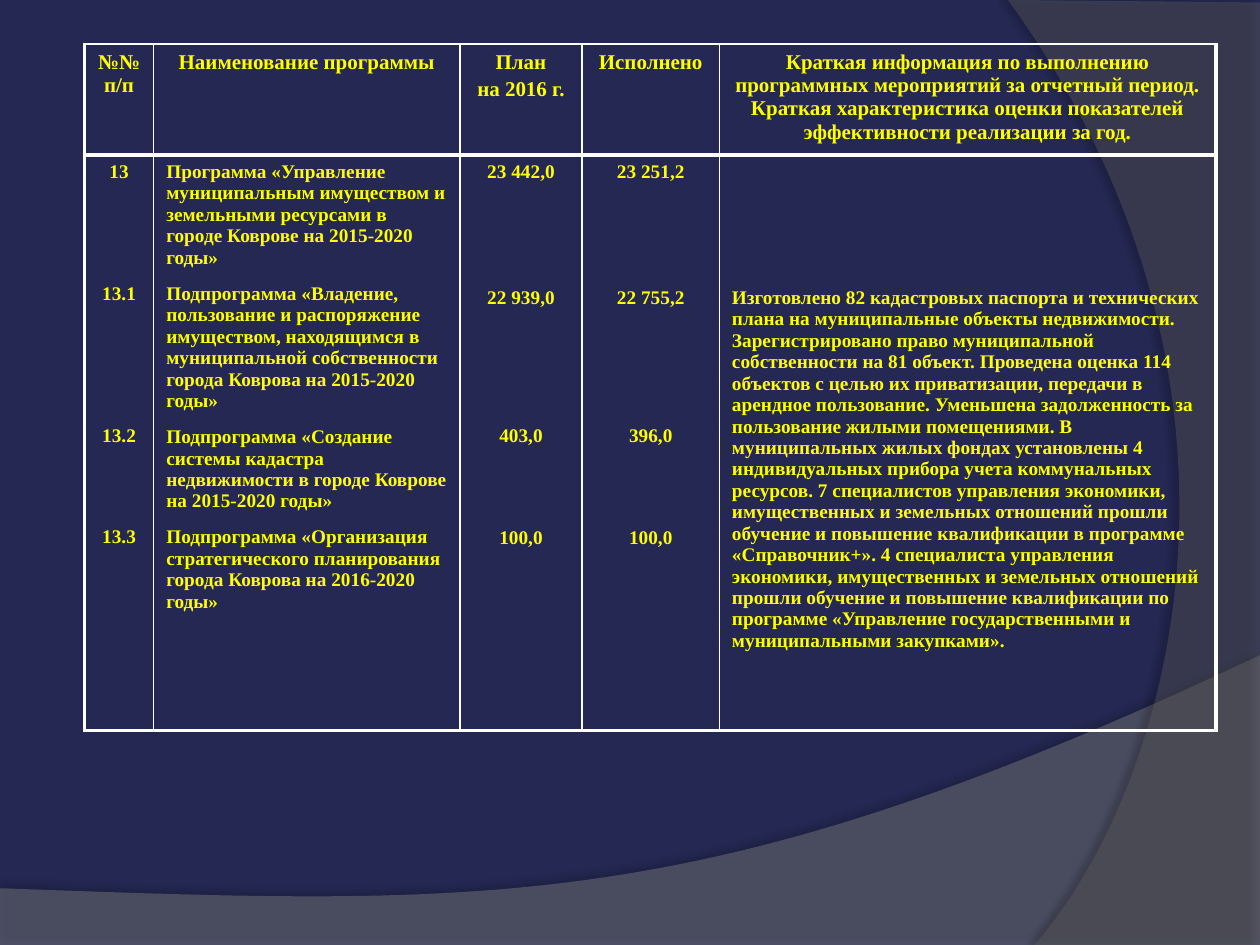
from dataclasses import dataclass

from lxml.etree import SubElement
from pptx import Presentation
from pptx.dml.color import RGBColor as Color
from pptx.enum.text import PP_ALIGN as Align
from pptx.oxml.ns import qn
from pptx.util import Inches, Pt


@dataclass(frozen=True)
class Theme:
    """Colours, font and type sizes of the deck."""
    back: str = "242852"
    wave: str = "7F7F7F"
    arc: str = "5E5E5E"
    shade: str = "000000"
    ink: str = "FFFF00"
    rule: str = "FFFFFF"
    font: str = "Times New Roman"
    head: float = 12
    body: float = 11
    thin: float = 1
    thick: float = 2.25


THEME = Theme()
COLUMNS = [0.55, 2.43, 0.97, 1.09, 3.94]
ROWS = [0.88, 4.57]
HEADINGS = [
    ["№№ п/п"],
    ["Наименование программы"],
    ["План", "на 2016 г."],
    ["Исполнено"],
    ["Краткая информация по выполнению программных мероприятий за отчетный период. "
     "Краткая характеристика оценки показателей эффективности реализации за год."],
]
NUMBERS = ["13", "13.1", "13.2", "13.3"]
PROGRAMMES = [
    "Программа «Управление муниципальным имуществом и земельными ресурсами "
    "в городе Коврове на 2015-2020 годы»",
    "Подпрограмма «Владение, пользование и распоряжение имуществом, находящимся "
    "в муниципальной собственности города Коврова на 2015-2020 годы»",
    "Подпрограмма «Создание системы кадастра недвижимости в городе Коврове "
    "на 2015-2020 годы»",
    "Подпрограмма «Организация стратегического планирования города Коврова "
    "на 2016-2020 годы»",
]
PLAN = ["23 442,0", "22 939,0", "403,0", "100,0"]
SPENT = ["23 251,2", "22 755,2", "396,0", "100,0"]
SUMMARY = [
    "Изготовлено 82 кадастровых паспорта и технических плана на муниципальные объекты "
    "недвижимости. Зарегистрировано право муниципальной собственности на 81 объект. "
    "Проведена оценка 114 объектов с целью их приватизации, передачи в арендное "
    "пользование. Уменьшена задолженность за пользование жилыми помещениями. "
    "В муниципальных жилых фондах установлены 4 индивидуальных прибора учета "
    "коммунальных ресурсов. 7 специалистов управления экономики, имущественных и "
    "земельных отношений прошли обучение и повышение квалификации в программе "
    "«Справочник+». 4 специалиста управления экономики, имущественных и земельных "
    "отношений прошли обучение и повышение квалификации по программе «Управление "
    "государственными и муниципальными закупками»."
]
NUMBER_GAPS = [57.5, 69, 45.5]
PROGRAMME_GAPS = [8.4] * 3
AMOUNT_GAPS = [59.8, 66.7, 46.1]


def curve(start, first, second, end, steps=60):
    """Return points along a cubic curve, without its start."""
    points = []
    for step in range(1, steps + 1):
        t = step / steps
        weights = ((1 - t) ** 3, 3 * t * (1 - t) ** 2, 3 * t * t * (1 - t), t ** 3)
        corners = (start, first, second, end)
        points.append(tuple(sum(w * c[axis] for w, c in zip(weights, corners))
                            for axis in (0, 1)))
    return points


def add_alpha(color, percent):
    """Make a colour element partly transparent."""
    SubElement(color, qn("a:alpha")).set("val", str(percent * 1000))


def add_swoosh(page, points, color, opacity, shade, distance, direction):
    """Draw a translucent outline with a soft shadow."""
    start, *rest = [(Inches(x), Inches(y)) for x, y in points]
    builder = page.shapes.build_freeform(*start)
    builder.add_line_segments(rest, close=True)
    shape = builder.convert_to_shape()
    shape.line.fill.background()
    shape.fill.solid()
    shape.fill.fore_color.rgb = Color.from_string(color)
    shape.shadow.inherit = False
    properties = shape._element.spPr
    add_alpha(properties.find(f"{qn('a:solidFill')}/{qn('a:srgbClr')}"), opacity)
    shadow = SubElement(properties.find(qn("a:effectLst")), qn("a:outerShdw"),
                        blurRad=str(Pt(4)), dist=str(Pt(distance)),
                        dir=str(direction * 60000), algn="ctr", rotWithShape="0")
    add_alpha(SubElement(shadow, qn("a:srgbClr"), val=THEME.shade), shade)


def add_backdrop(page, width, height):
    """Fill the background and draw the two swooshes to the page's edges."""
    page.background.fill.solid()
    page.background.fill.fore_color.rgb = Color.from_string(THEME.back)
    wave = [(0, 7.05), (0, height), (width, height), (width, 5.2)]
    wave += curve((width, 5.2), (5.59, 7.29), (3.91, 7.19), (0, 7.05))
    add_swoosh(page, wave, THEME.wave, 45, 35, 3.5, 270)
    arc = [(width, 0.02), (width, height), (8.21, height)]
    arc += curve((8.21, height), (9.35, 6.19), (10.18, 3), (8, 0))
    add_swoosh(page, arc, THEME.arc, 40, 45, 4, 180)


def write(frame, texts, size, align=Align.LEFT, gaps=()):
    """Write one paragraph per text, with the given gaps between them."""
    for index, text in enumerate(texts):
        para = frame.add_paragraph() if index else frame.paragraphs[0]
        para.alignment = align
        para.space_before = Pt(gaps[index - 1] if index else 0)
        span = para.add_run()
        span.text = text
        span.font.name = THEME.font
        span.font.size = Pt(size)
        span.font.bold = True
        span.font.color.rgb = Color.from_string(THEME.ink)


def set_borders(cell, **widths):
    """Rule the sides of a cell and leave it unfilled."""
    properties = cell._tc.get_or_add_tcPr()
    for side, width in widths.items():
        line = SubElement(properties, qn(f"a:ln{side}"), w=str(Pt(width)))
        fill = SubElement(line, qn("a:solidFill"))
        SubElement(fill, qn("a:srgbClr"), val=THEME.rule)
    cell.fill.background()


def add_programme_table(page, left, top):
    """Place the programme table with its heading row."""
    frame = page.shapes.add_table(len(ROWS), len(COLUMNS), Inches(left), Inches(top),
                                  Inches(sum(COLUMNS)), Inches(sum(ROWS)))
    table = frame.table
    table.first_row = table.horz_banding = False
    for column, width in zip(table.columns, COLUMNS):
        column.width = Inches(width)
    for row, height in zip(table.rows, ROWS):
        row.height = Inches(height)
    last = len(COLUMNS) - 1
    for row in range(len(ROWS)):
        for column in range(len(COLUMNS)):
            set_borders(table.cell(row, column),
                        L=THEME.thin if column else THEME.thick,
                        R=THEME.thick if column == last else THEME.thin,
                        T=THEME.thick if row else THEME.thin,
                        B=THEME.thick)
    for column, texts in enumerate(HEADINGS):
        write(table.cell(0, column).text_frame, texts, THEME.head, Align.CENTER, [2.4])
    contents = [
        (NUMBERS, Align.CENTER, NUMBER_GAPS),
        (PROGRAMMES, Align.LEFT, PROGRAMME_GAPS),
        (PLAN, Align.CENTER, AMOUNT_GAPS),
        (SPENT, Align.CENTER, AMOUNT_GAPS),
        (SUMMARY, Align.LEFT, []),
    ]
    for column, (texts, align, gaps) in enumerate(contents):
        write(table.cell(1, column).text_frame, texts, THEME.body, align, gaps)
    table.cell(1, last).margin_top = Inches(1.05)


def main():
    """Build and save the deck."""
    deck = Presentation()
    deck.slide_width, deck.slide_height = Inches(10), Inches(7.5)
    page = deck.slides.add_slide(deck.slide_layouts[6])
    add_backdrop(page, 10, 7.5)
    add_programme_table(page, 0.67, 0.35)
    deck.save("out.pptx")


if __name__ == "__main__":
    main()
